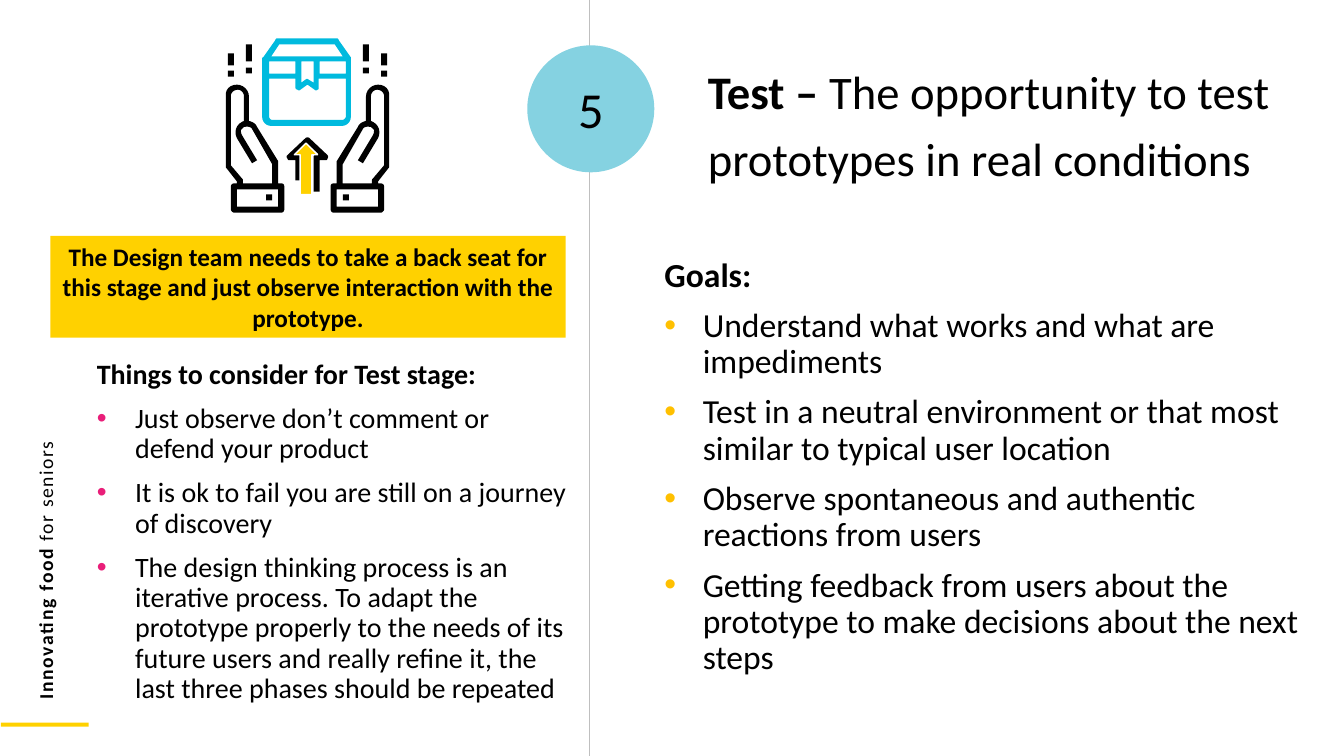
import pptx
import pptx.dml.color
import pptx.enum.shapes
import pptx.enum.text
import pptx.oxml
import pptx.oxml.ns
import pptx.util

PX = 9144  # EMU per px, 100 px to the inch
SHAPE = pptx.enum.shapes.MSO_SHAPE
ALIGN = pptx.enum.text.PP_ALIGN
ANCHOR = pptx.enum.text.MSO_ANCHOR
MIRROR = 610  # left and right x of the icon add up to this


class Theme:
    font = "Calibri"
    black, white, grey = "000000", "FFFFFF", "BFBFBF"
    yellow, amber, pink = "FFD100", "FFC000", "E91E79"
    aqua, cyan = "85D2E1", "00BADE"
    number, title, goals, notes, callout, tagline = 36, 33.3, 24, 20, 18, 14


# Icon outlines: a pair is a corner, a six-tuple is a cubic curve
BOX = [
    [(348, 57), (336, 40), (336, 39, 335, 38, 334, 38), (275, 38),
     (274, 38, 273, 39, 273, 40), (261, 57), (260, 57, 260, 58, 260, 58), (260, 116),
     (260, 121, 264, 125, 269, 125), (339, 125), (344, 125, 348, 121, 348, 116), (348, 58)],
    [(277, 44), (332, 44), (340, 56), (269, 56)],
    [(311, 61), (311, 82), (306, 79), (305, 78, 304, 78, 303, 79), (299, 82), (299, 61)],
    [(267, 61), (293, 61), (293, 73), (267, 73)],
    [(343, 116), (343, 117, 341, 119, 340, 119), (270, 119), (268, 119, 267, 117, 267, 116),
     (267, 78), (293, 78), (293, 87), (293, 88, 294, 89, 295, 89),
     (296, 90, 297, 90, 298, 89), (305, 84), (312, 89), (313, 90, 314, 90, 315, 89),
     (316, 89, 316, 88, 316, 87), (316, 78), (343, 78)],
    [(343, 73), (317, 73), (317, 61), (343, 61)],
]
ARROW = [
    [(307, 137), (306, 136, 304, 136, 303, 137), (285, 154), (284, 155, 284, 156, 285, 157),
     (285, 158, 286, 159, 287, 159), (293, 159), (293, 179), (299, 179), (299, 156),
     (299, 154, 298, 153, 296, 153), (295, 153), (305, 143), (316, 153), (314, 153),
     (313, 153, 311, 154, 311, 156), (311, 190), (317, 190), (317, 159), (323, 159),
     (324, 159, 325, 158, 325, 157), (326, 156, 325, 154, 325, 154)],
]
HAND = [
    [(375, 84), (369, 84, 363, 89, 363, 96), (363, 120), (359, 121, 356, 123, 355, 126),
     (334, 160), (334, 182), (331, 182), (329, 182, 328, 183, 328, 185), (328, 208),
     (328, 209, 329, 211, 331, 211), (378, 211), (379, 211, 381, 209, 381, 208), (381, 185),
     (381, 183, 379, 182, 378, 182), (375, 182), (375, 180), (386, 166),
     (386, 166, 386, 165, 386, 164), (386, 96), (387, 89, 382, 84, 375, 84)],
    [(375, 205), (334, 205), (334, 188), (375, 188)],
    [(381, 164), (370, 177), (369, 178, 369, 178, 369, 179), (369, 182), (340, 182),
     (340, 163), (360, 128), (360, 127, 362, 126, 363, 126), (365, 125, 366, 126, 368, 126),
     (369, 127, 370, 128, 371, 129), (371, 131, 371, 132, 370, 134), (355, 159), (360, 162),
     (375, 137), (378, 131, 376, 124, 370, 121), (368, 120), (368, 95),
     (368, 92, 371, 89, 374, 89), (378, 89, 381, 92, 381, 95)],
]
# Exclamation marks and cuff button of the right half
MARKS = [(360, 44, 6, 17), (360, 67, 6, 6), (378, 53, 6, 12), (378, 70, 6, 6),
         (340, 193, 6, 6)]


def px(*lengths):
    return [n * PX for n in lengths]


def rgb(color):
    return pptx.dml.color.RGBColor.from_string(color)


def apply(obj, formats):
    for name, value in formats.items():
        setattr(obj, name, value)


def paint(sp, fill, line=None):
    sp.shadow.inherit = False
    sp.fill.solid()
    sp.fill.fore_color.rgb = rgb(fill)
    if line:
        sp.line.color.rgb = rgb(line)
        sp.line.width = pptx.util.Pt(1)
    else:
        sp.line.fill.background()
    return sp


def add_block(shapes, kind, box, fill, line=None):
    return paint(shapes.add_shape(kind, *px(*box)), fill, line)


def add_run(p, text, size, bold=False):
    r = p.add_run()
    r.text = text
    apply(r.font, {"name": Theme.font, "size": pptx.util.Pt(size), "bold": bold})
    r.font.color.rgb = rgb(Theme.black)
    return r


def set_bullet(p, color=None):
    pPr = p._p.get_or_add_pPr()
    indent = 38 * PX if color else 0
    pPr.set("marL", str(indent))
    pPr.set("indent", str(-indent))
    ns = pptx.oxml.ns.nsdecls("a")
    parts = [f"<a:buNone {ns}/>"]
    if color:
        parts = [f'<a:buClr {ns}><a:srgbClr val="{color}"/></a:buClr>',
                 f'<a:buFont {ns} typeface="Arial"/>', f'<a:buChar {ns} char="•"/>']
    for part in parts:
        pPr.append(pptx.oxml.parse_xml(part))


def place(sp, box):
    apply(sp, dict(zip(("left", "top", "width", "height"), px(*box))))
    apply(sp.text_frame, {"word_wrap": True, "vertical_anchor": ANCHOR.TOP,
                          "auto_size": pptx.enum.text.MSO_AUTO_SIZE.NONE})
    return sp.text_frame


def fill_list(sp, box, heading, items, size, color):
    tf = place(sp, box)
    for i, text in enumerate([heading] + items):
        p = tf.add_paragraph() if i else tf.paragraphs[0]
        apply(p, {"line_spacing": 0.9, "space_before": pptx.util.Pt(10 if i else 0)})
        set_bullet(p, color if i else None)
        add_run(p, text, size, bold=i == 0)


def flatten(contour, steps=6):
    points = []
    for seg in contour:
        if len(seg) == 2:
            points.append(seg)
            continue
        ctrl = [points[-1] if points else contour[-1][-2:], seg[:2], seg[2:4], seg[4:]]
        for k in range(1, steps + 1):
            t = k / steps
            weights = ((1 - t) ** 3, 3 * t * (1 - t) ** 2, 3 * t * t * (1 - t), t ** 3)
            points.append(tuple(sum(w * c[a] for w, c in zip(weights, ctrl))
                                for a in (0, 1)))
    return points


def add_outline(shapes, contours, fill, mirrored=False):
    builder = None
    for contour in contours:
        points = [px(MIRROR - x if mirrored else x, y) for x, y in flatten(contour)]
        if builder:
            builder.move_to(*points[0])
        else:
            builder = shapes.build_freeform(*points[0], scale=1.0)
        builder.add_line_segments(points[1:], close=True)
    paint(builder.convert_to_shape(), fill)


def add_icon(slide):
    shapes = slide.shapes.add_group_shape().shapes
    add_outline(shapes, BOX, Theme.cyan)
    add_outline(shapes, ARROW, Theme.black)
    for mirrored in (False, True):
        add_outline(shapes, HAND, Theme.black, mirrored)
        for x, y, w, h in MARKS:
            left = MIRROR - x - w if mirrored else x
            add_block(shapes, SHAPE.RECTANGLE, (left, y, w, h), Theme.black)
    add_block(shapes, SHAPE.UP_ARROW, (292, 142, 23, 51), Theme.yellow, Theme.white)


def add_divider(slide):
    line = slide.shapes.add_connector(pptx.enum.shapes.MSO_CONNECTOR.STRAIGHT,
                                      *px(585, 0, 585, 750))
    line.line.color.rgb = rgb(Theme.grey)
    line.line.width = pptx.util.Pt(0.75)
    line._element.spPr.append(
        pptx.oxml.parse_xml(f'<a:effectLst {pptx.oxml.ns.nsdecls("a")}/>'))


def add_label(sp, text, size, bold=False):
    tf = sp.text_frame
    apply(tf, {"word_wrap": True, "vertical_anchor": ANCHOR.MIDDLE})
    tf.paragraphs[0].alignment = ALIGN.CENTER
    add_run(tf.paragraphs[0], text, size, bold)


def add_tagline(slide):
    tf = slide.shapes.add_textbox(*px(28, 394, 34, 300)).text_frame
    apply(tf, {"word_wrap": True, "vertical_anchor": ANCHOR.MIDDLE, "margin_left": 0,
               "margin_right": 0, "margin_top": 0, "margin_bottom": 0})
    tf._txBody.bodyPr.set("vert", "vert270")
    for text, bold in (("Innovating food ", True), ("for seniors", False)):
        r = add_run(tf.paragraphs[0], text, Theme.tagline, bold)
        r._r.get_or_add_rPr().set("spc", "110")


def main():
    prs = pptx.Presentation()
    prs.slide_width, prs.slide_height = px(1333, 750)
    slide = prs.slides.add_slide(prs.slide_layouts[3])
    title, goals, notes = slide.placeholders

    # Frame: divider, stage number, accent rule and side tagline
    add_divider(slide)
    circle = add_block(slide.shapes, SHAPE.OVAL, (523, 45, 126, 126), Theme.aqua)
    add_label(circle, "5", Theme.number)
    add_block(slide.shapes, SHAPE.RECTANGLE, (1, 717, 87, 4), Theme.yellow)
    add_tagline(slide)

    # Title
    p = place(title, (692, 46, 594, 180)).paragraphs[0]
    apply(p, {"alignment": ALIGN.LEFT, "line_spacing": 1.2})
    add_run(p, "Test – ", Theme.title, True)
    add_run(p, "The opportunity to test prototypes in real conditions", Theme.title)

    # Lists
    fill_list(goals, (649, 251, 662, 407), "Goals:", [
        "Understand what works and what are impediments",
        "Test in a neutral environment or that most similar to typical user location",
        "Observe spontaneous and authentic reactions from users",
        "Getting feedback from users about the prototype to make decisions about the next steps",
    ], Theme.goals, Theme.amber)
    fill_list(notes, (86, 352, 490, 376), "Things to consider for Test stage:", [
        "Just observe don’t comment or defend your product",
        "It is ok to fail you are still on a journey of discovery",
        "The design thinking process is an iterative process. To adapt the prototype properly "
        "to the needs of its future users and really refine it, the last three phases "
        "should be repeated",
    ], Theme.notes, Theme.pink)

    # Callout and icon
    callout = add_block(slide.shapes, SHAPE.RECTANGLE, (50, 234, 511, 101), Theme.yellow)
    add_label(callout, "The Design team needs to take a back seat for this stage and just "
              "observe interaction with the prototype.", Theme.callout, True)
    add_icon(slide)
    prs.save("out.pptx")


if __name__ == "__main__":
    main()
